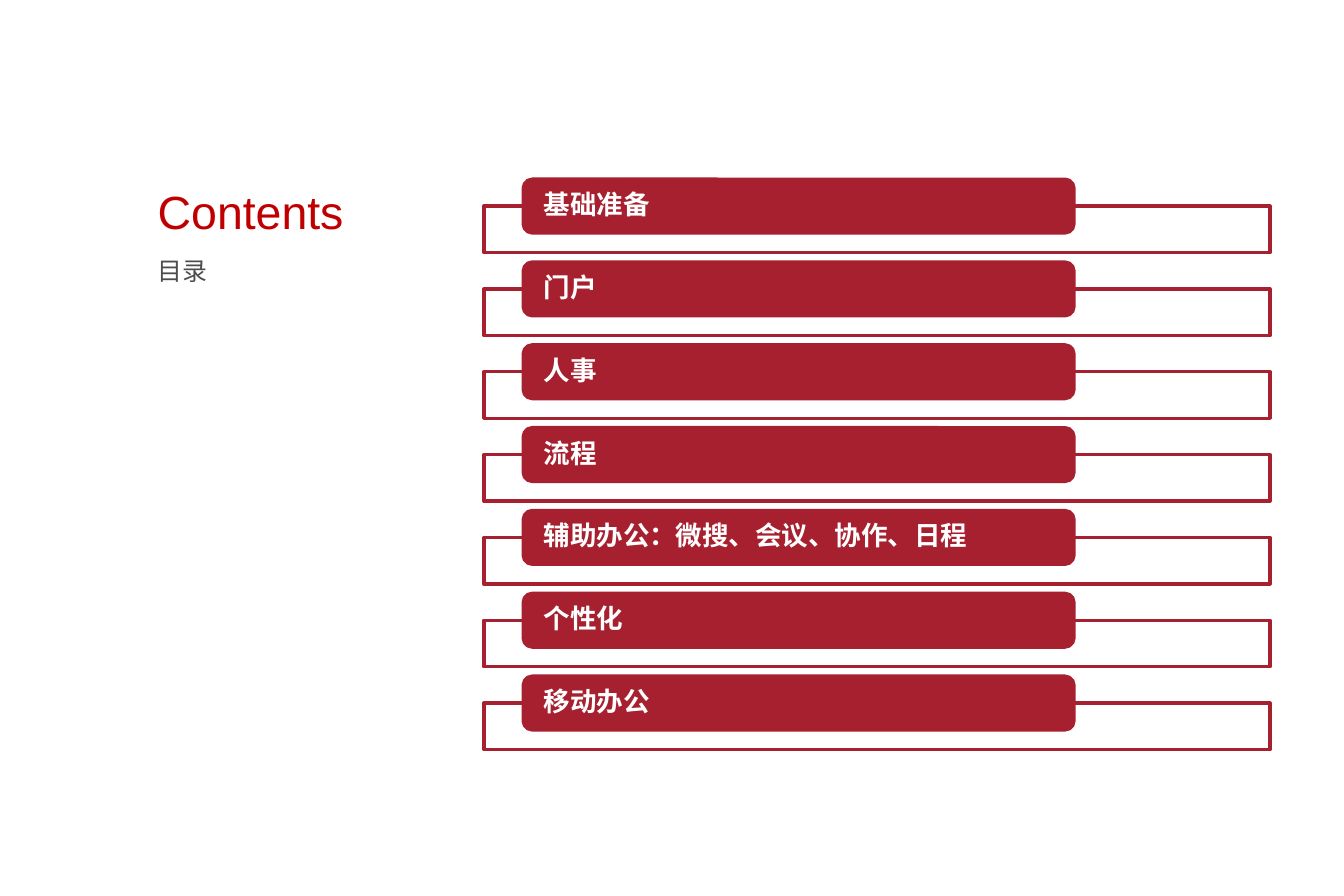
from pptx import Presentation
from pptx.dml.color import RGBColor
from pptx.enum.shapes import MSO_SHAPE
from pptx.enum.text import MSO_ANCHOR, MSO_AUTO_SIZE, PP_ALIGN
from pptx.oxml.ns import qn
from pptx.util import Inches, Pt
from lxml import etree

RECT, ROUND = MSO_SHAPE.RECTANGLE, MSO_SHAPE.ROUNDED_RECTANGLE
TOP, MIDDLE = MSO_ANCHOR.TOP, MSO_ANCHOR.MIDDLE
LEFT, GROW = PP_ALIGN.LEFT, MSO_AUTO_SIZE.SHAPE_TO_FIT_TEXT
RED, WHITE = "A6202F", "FFFFFF"


def write(sp, text, size, color, bold=False, anchor=TOP, inset=0.1, pad=0.05, spacing=1.0):
    tf = sp.text_frame
    tf.vertical_anchor = anchor
    tf.margin_left = tf.margin_right = Inches(inset)
    tf.margin_top = tf.margin_bottom = Inches(pad)
    p = tf.paragraphs[0]
    p.alignment, p.line_spacing = LEFT, spacing
    r = p.add_run()
    r.text = text
    r.font.name, r.font.size, r.font.bold = "Arial", Pt(size), bold
    r.font.color.rgb = RGBColor.from_string(color)
    return tf


def add_box(shape, x, y, w, h, fill):
    sp = s.shapes.add_shape(shape, Inches(x), Inches(y), Inches(w), Inches(h))
    sp.shadow.inherit = False
    sp.fill.solid()
    sp.fill.fore_color.rgb = RGBColor.from_string(fill)
    sp.line.color.rgb = RGBColor.from_string(RED)
    sp.line.width = Pt(2)
    return sp


prs = Presentation()
prs.slide_width, prs.slide_height = Inches(11.25), Inches(7.5)
s = prs.slides.add_slide(prs.slide_layouts[5])

# Heading and subtitle
title = s.shapes.title
title.left, title.top, title.width, title.height = map(Inches, (1.22, 1.48, 1.76, 0.57))
subtitle = s.shapes.add_textbox(Inches(1.22), Inches(2.09), Inches(0.62), Inches(0.35))
for sp, text, size, color in ((title, "Contents", 28, "C00000"), (subtitle, "目录", 15, "4D4D4D")):
    tf = write(sp, text, size, color)
    tf.word_wrap, tf.auto_size = False, GROW

# Chapter list: an outlined frame behind each red label
chapters = ["基础准备", "门户", "人事", "流程", "辅助办公：微搜、会议、协作、日程", "个性化", "移动办公"]
first_top, pitch = 1.5, 4.16 / 6
for i, chapter in enumerate(chapters):
    y = first_top + i * pitch
    frame = add_box(RECT, 4.05, y + 0.225, 6.58, 0.39, WHITE)
    fill_color = frame.fill._xPr.find(qn("a:solidFill"))[0]
    etree.SubElement(fill_color, qn("a:alpha"), val="90000")
    label = add_box(ROUND, 4.38, y, 4.61, 0.45, RED)
    write(label, chapter, 16, WHITE, bold=True, anchor=MIDDLE, inset=0.15, pad=0, spacing=0.9)

prs.save("out.pptx")
